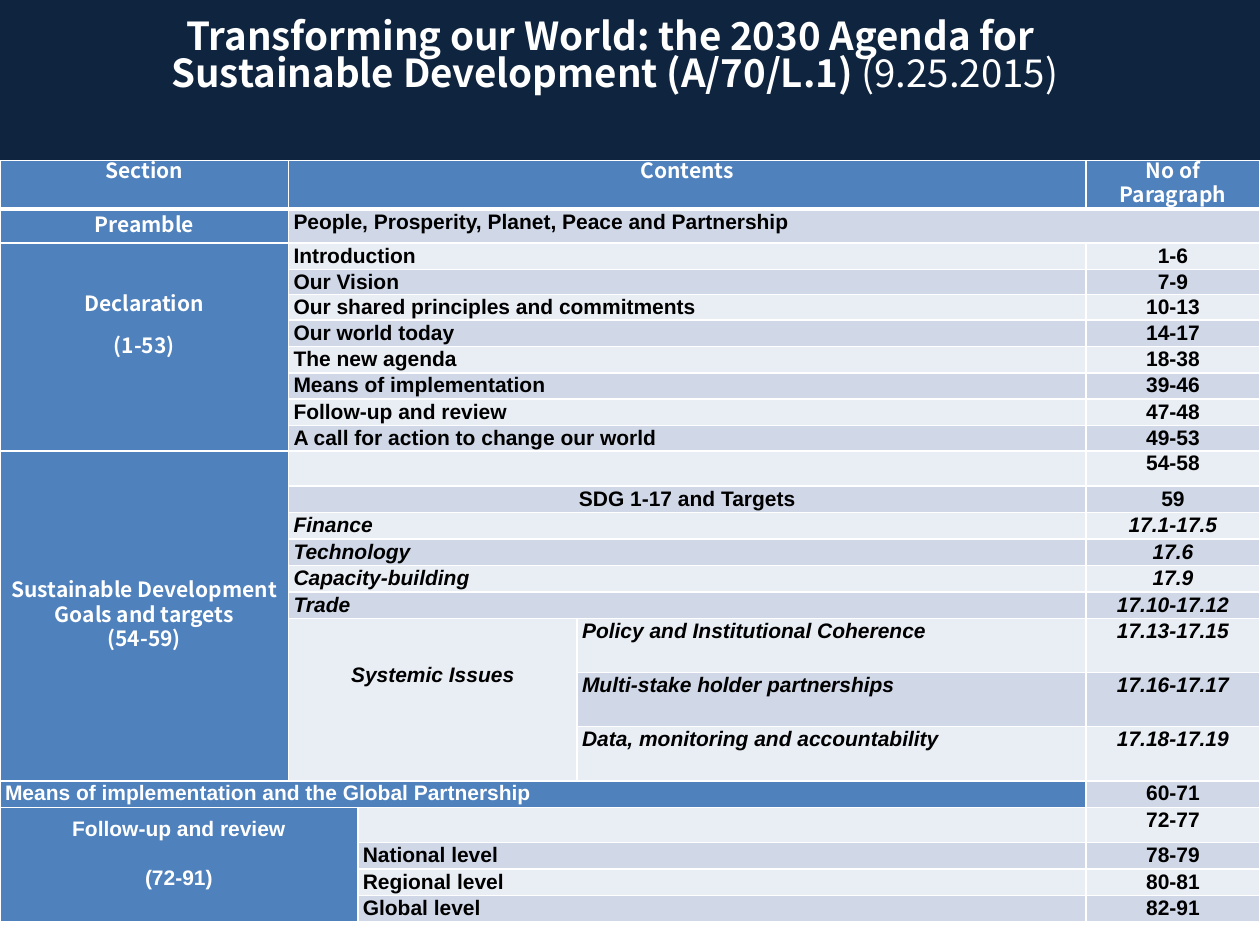
from dataclasses import dataclass

from lxml.etree import SubElement
from pptx import Presentation
from pptx.dml.color import RGBColor
from pptx.enum.shapes import MSO_SHAPE
from pptx.enum.text import MSO_ANCHOR as ANCHOR, PP_ALIGN as ALIGN
from pptx.oxml.ns import qn
from pptx.util import Inches, Pt

COLORS = {
    "navy": "0F243E",
    "blue": "4F81BD",
    "dark_band": "D0D8E8",
    "light_band": "E9EDF4",
    "white": "FFFFFF",
    "black": "000000",
}
SANS, CJK = "Arial", "Noto Sans CJK KR"
COL_WIDTHS = [2.29, 0.55, 1.74, 4.04, 1.38]
ROW_HEIGHTS = ([0.21, 0.27, 0.21, 0.2, 0.2] + [0.21] * 4 + [0.2] * 2
               + [0.21] * 5 + [0.43] * 3 + [0.21] * 5)
LAST_COL = len(COL_WIDTHS) - 1


@dataclass
class Cell:
    row: int
    col: int
    text: str
    rows: int = 1
    cols: int = 1
    align: ALIGN = ALIGN.CENTER
    middle: bool = False
    blue: bool = False
    font: str = SANS
    italic: bool = False
    gap: float = 0      # points between paragraphs
    bottom: float = 0   # bottom inset in inches


@dataclass
class Entry:
    text: str
    number: str
    col: int = 1
    italic: bool = False
    align: ALIGN = ALIGN.JUSTIFY


# Section and heading cells
HEADINGS = [
    Cell(0, 0, "Section", blue=True, font=CJK),
    Cell(0, 1, "Contents", cols=3, blue=True, font=CJK),
    Cell(0, 4, "No of Paragraph", blue=True, font=CJK),
    Cell(1, 0, "Preamble", middle=True, blue=True, font=CJK),
    Cell(1, 1, "People, Prosperity, Planet, Peace and Partnership", cols=4,
         align=ALIGN.JUSTIFY),
    Cell(2, 0, "Declaration\n(1-53)", rows=8, middle=True, blue=True, font=CJK,
         gap=10, bottom=0.33),
    Cell(10, 0, "Sustainable Development Goals and targets\n(54-59)", rows=9,
         middle=True, blue=True, font=CJK),
    Cell(16, 1, "Systemic Issues", rows=3, cols=2, middle=True, italic=True,
         bottom=0.39),
    Cell(19, 0, "Means of implementation and the Global Partnership", cols=4,
         align=ALIGN.JUSTIFY, blue=True),
    Cell(19, 4, "60-71"),
    Cell(20, 0, "Follow-up and review\n(72-91)", rows=4, cols=2, middle=True,
         blue=True, gap=14, bottom=0.19),
]

# Contents with paragraph numbers, keyed by the first row of each block
ENTRIES = {
    2: [
        Entry("Introduction", "1-6"),
        Entry("Our Vision", "7-9"),
        Entry("Our shared principles and commitments", "10-13"),
        Entry("Our world today", "14-17"),
        Entry("The new agenda", "18-38"),
        Entry("Means of implementation", "39-46"),
        Entry("Follow-up and review", "47-48"),
        Entry("A call for action to change our world", "49-53"),
        Entry("", "54-58"),
        Entry("SDG 1-17 and Targets", "59", align=ALIGN.CENTER),
        Entry("Finance", "17.1-17.5", italic=True),
        Entry("Technology", "17.6", italic=True),
        Entry("Capacity-building", "17.9", italic=True),
        Entry("Trade", "17.10-17.12", italic=True),
        Entry("Policy and Institutional Coherence", "17.13-17.15", 3, True),
        Entry("Multi-stake holder partnerships", "17.16-17.17", 3, True),
        Entry("Data, monitoring and accountability", "17.18-17.19", 3, True),
    ],
    20: [
        Entry("", "72-77", 2),
        Entry("National level", "78-79", 2),
        Entry("Regional level", "80-81", 2),
        Entry("Global level", "82-91", 2),
    ],
}


def rgb(name: str) -> RGBColor:
    return RGBColor.from_string(COLORS[name])


def entry_cells(row: int, entry: Entry) -> list[Cell]:
    return [
        Cell(row, entry.col, entry.text, cols=LAST_COL - entry.col,
             align=entry.align, italic=entry.italic),
        Cell(row, LAST_COL, entry.number, italic=entry.italic),
    ]


def set_borders(cell, bottom_width: float) -> None:
    tc_pr = cell._tc.get_or_add_tcPr()
    for side in "LRTB":
        width = bottom_width if side == "B" else 1
        ln = SubElement(tc_pr, qn(f"a:ln{side}"), w=str(Pt(width)))
        fill = SubElement(ln, qn("a:solidFill"))
        SubElement(fill, qn("a:srgbClr"), val=COLORS["white"])


def style_font(font, name: str, size: float, color: str, bold: bool = True) -> None:
    font.name = name
    font.size = Pt(size)
    font.bold = bold
    font.color.rgb = rgb(color)


def fill_cell(table, item: Cell) -> None:
    cell = table.cell(item.row, item.col)
    if item.rows * item.cols > 1:
        cell.merge(table.cell(item.row + item.rows - 1, item.col + item.cols - 1))
    band = "dark_band" if item.row % 2 else "light_band"
    cell.fill.solid()
    cell.fill.fore_color.rgb = rgb("blue" if item.blue else band)
    cell.vertical_anchor = ANCHOR.MIDDLE if item.middle else ANCHOR.TOP
    cell.margin_left = cell.margin_right = Inches(0.04)
    cell.margin_top, cell.margin_bottom = 0, Inches(item.bottom)

    tf = cell.text_frame
    for i, line in enumerate(item.text.split("\n")):
        p = tf.add_paragraph() if i else tf.paragraphs[0]
        p.alignment = item.align
        p.line_spacing = Pt(14)
        p.space_after = Pt(0 if i else item.gap)
        r = p.add_run()
        r.text = line
        style_font(r.font, item.font, 12, "white" if item.blue else "black")
        r.font.italic = item.italic


def add_agenda_table(slide) -> None:
    table = slide.shapes.add_table(
        len(ROW_HEIGHTS), len(COL_WIDTHS), 0, Inches(1.27),
        Inches(sum(COL_WIDTHS)), Inches(sum(ROW_HEIGHTS))).table
    table.first_row = table.horz_banding = False
    for column, width in zip(table.columns, COL_WIDTHS):
        column.width = Inches(width)
    for i, (row, height) in enumerate(zip(table.rows, ROW_HEIGHTS)):
        row.height = Inches(height)
        for cell in row.cells:
            set_borders(cell, 1 if i else 3)

    cells = HEADINGS + [
        cell for first, block in ENTRIES.items()
        for row, entry in enumerate(block, first)
        for cell in entry_cells(row, entry)
    ]
    for item in cells:
        fill_cell(table, item)


def add_banner(slide) -> None:
    sp = slide.shapes.add_shape(MSO_SHAPE.RECTANGLE, 0, 0, Inches(10), Inches(1.27))
    sp.shadow.inherit = False
    sp.fill.solid()
    sp.fill.fore_color.rgb = rgb("navy")
    sp.line.fill.background()


def add_title(slide) -> None:
    tf = slide.shapes.add_textbox(Inches(0.12), 0, Inches(9.52), Inches(1.27)).text_frame
    tf.word_wrap = True
    tf.vertical_anchor = ANCHOR.MIDDLE
    tf.margin_bottom = Inches(0.4)
    p = tf.paragraphs[0]
    p.alignment = ALIGN.CENTER
    p.line_spacing = 0.8
    lines = ["Transforming our World: the 2030 Agenda for ",
             "Sustainable Development (A/70/L.1) "]
    for i, line in enumerate(lines):
        if i:
            p.add_line_break()
        r = p.add_run()
        r.text = line
        style_font(r.font, CJK, 22, "white")
    r = p.add_run()
    r.text = "(9.25.2015)"
    style_font(r.font, CJK, 22, "white", bold=False)


def main() -> None:
    prs = Presentation()
    prs.slide_width, prs.slide_height = Inches(10), Inches(7.5)
    slide = prs.slides.add_slide(prs.slide_layouts[6])
    add_agenda_table(slide)
    add_banner(slide)
    add_title(slide)
    prs.save("out.pptx")


if __name__ == "__main__":
    main()
